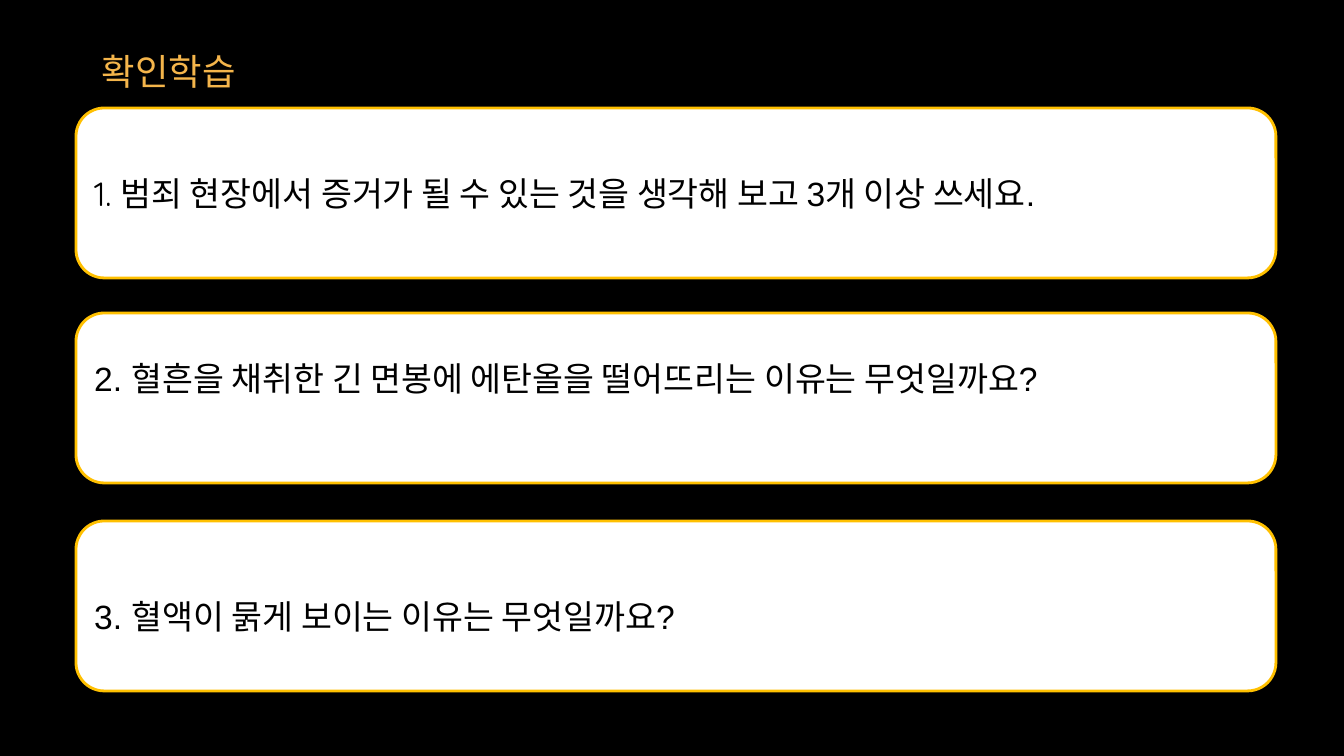
"""Build a review slide with a heading and three question boxes."""
from pptx import Presentation
from pptx.dml.color import RGBColor
from pptx.enum.shapes import MSO_SHAPE as SHAPE
from pptx.enum.text import MSO_ANCHOR as ANCHOR, PP_ALIGN as ALIGN
from pptx.util import Pt

PX = 914400 / 100.8
BLACK, WHITE, GOLD, AMBER = "000000", "FFFFFF", "FFC000", "F4B54B"
HEADING_FONT, BODY_FONT = "Quicksand", "Arial"

TITLE = "확인학습"
BOX_LEFT, BOX_W, BOX_H = 76, 1200, 170
INSET = 10
# top, line spacing, bottom inset, runs
QUESTIONS = [
    (108, 1.0, 5, [("1. ", HEADING_FONT),
                   ("범죄 현장에서 증거가 될 수 있는 것을 생각해 보고 3개 이상 쓰세요.", BODY_FONT)]),
    (313, 1.5, 65, [("2. 혈흔을 채취한 긴 면봉에 에탄올을 떨어뜨리는 이유는 무엇일까요?", BODY_FONT)]),
    (521, 1.5, 5, [("3. 혈액이 묽게 보이는 이유는 무엇일까요?", BODY_FONT)]),
]


def px(n):
    return round(n * PX)


def rgb(color):
    return RGBColor.from_string(color)


def add_run(p, text, font, size, color):
    r = p.add_run()
    r.text = text
    r.font.name, r.font.size = font, Pt(size)
    r.font.color.rgb = rgb(color)


def add_title(s):
    tf = s.shapes.add_textbox(px(92), px(39), px(378), px(48)).text_frame
    tf.word_wrap = True
    tf.margin_left = tf.margin_right = tf.margin_top = tf.margin_bottom = px(INSET)
    add_run(tf.paragraphs[0], TITLE, HEADING_FONT, 26, AMBER)


def add_question(s, top, spacing, bottom, runs):
    sp = s.shapes.add_shape(SHAPE.ROUNDED_RECTANGLE, px(BOX_LEFT), px(top), px(BOX_W), px(BOX_H))
    sp.shadow.inherit = False
    sp.fill.solid()
    sp.fill.fore_color.rgb = rgb(WHITE)
    sp.line.color.rgb = rgb(GOLD)
    sp.line.width = Pt(2)
    tf = sp.text_frame
    tf.word_wrap = True
    tf.vertical_anchor = ANCHOR.MIDDLE
    tf.margin_bottom = px(bottom)
    p = tf.paragraphs[0]
    p.alignment = ALIGN.LEFT
    p.line_spacing = spacing
    for text, font in runs:
        add_run(p, text, font, 24, BLACK)


def main():
    prs = Presentation()
    prs.slide_width, prs.slide_height = px(1344), px(756)
    s = prs.slides.add_slide(prs.slide_layouts[6])
    s.background.fill.solid()
    s.background.fill.fore_color.rgb = rgb(BLACK)
    add_title(s)
    for question in QUESTIONS:
        add_question(s, *question)
    prs.save("out.pptx")


if __name__ == "__main__":
    main()
